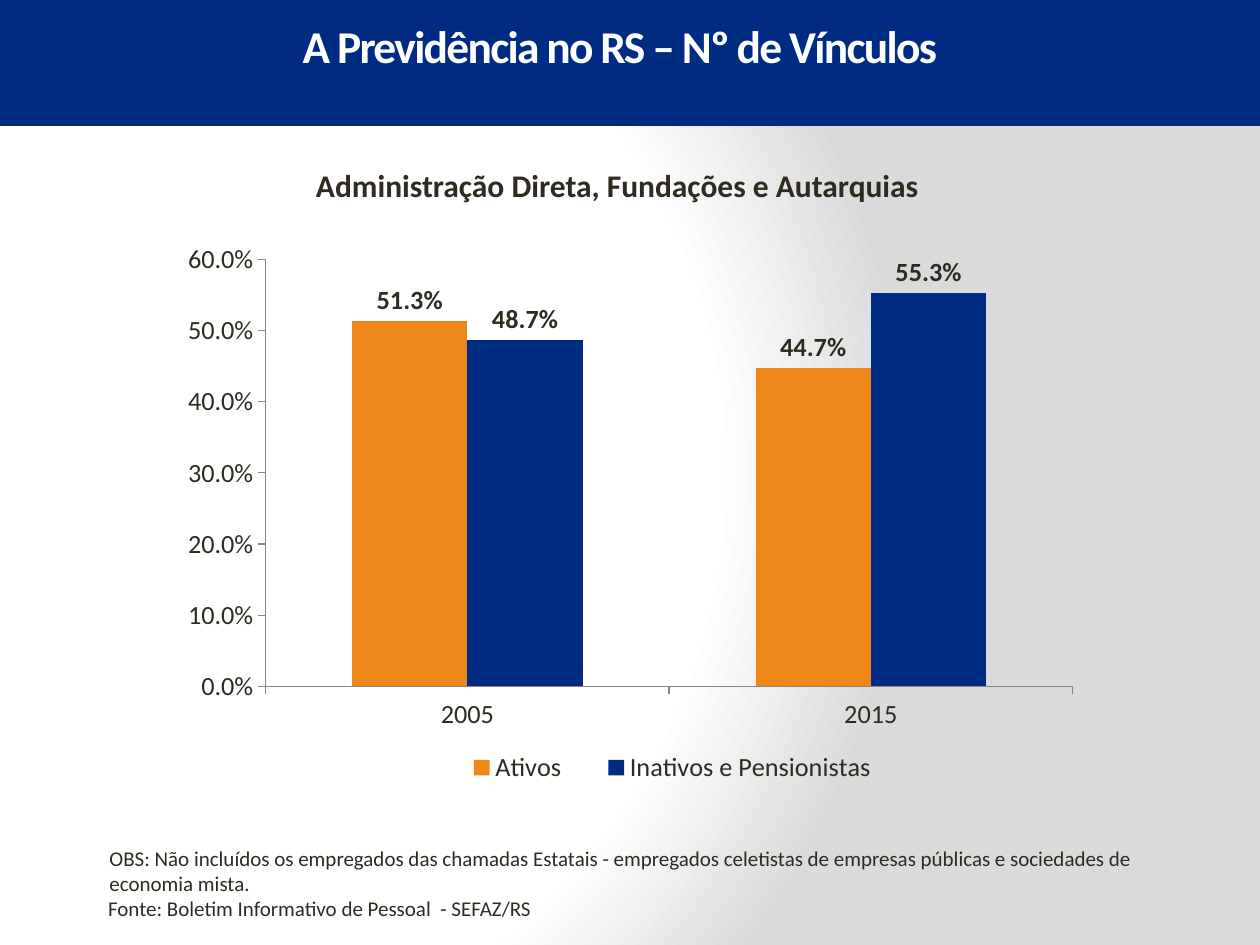
from dataclasses import dataclass

from pptx import Presentation
from pptx.chart.data import CategoryChartData
from pptx.dml.color import RGBColor
from pptx.enum.chart import XL_CHART_TYPE, XL_LABEL_POSITION, XL_LEGEND_POSITION, XL_TICK_MARK
from pptx.enum.text import MSO_ANCHOR, MSO_AUTO_SIZE, PP_ALIGN
from pptx.oxml import parse_xml
from pptx.oxml.ns import nsdecls, qn
from pptx.util import Inches, Pt

COLUMNS = XL_CHART_TYPE.COLUMN_CLUSTERED
LABEL_OUTSIDE = XL_LABEL_POSITION.OUTSIDE_END
LEGEND_BOTTOM = XL_LEGEND_POSITION.BOTTOM
TICK_OUTSIDE = XL_TICK_MARK.OUTSIDE
TOP = MSO_ANCHOR.TOP
NO_FIT = MSO_AUTO_SIZE.NONE
LEFT, CENTER = PP_ALIGN.LEFT, PP_ALIGN.CENTER
TITLE_ONLY = 5


@dataclass(frozen=True)
class Theme:
    font: str = "Calibri"
    navy: str = "002B82"
    orange: str = "ED8717"
    ink: str = "2F2B20"
    white: str = "FFFFFF"
    gray: str = "DADADA"
    axis: str = "868686"
    title: int = 26
    subtitle: int = 18
    chart: int = 15
    note: int = 12


THEME = Theme()


def rgb(value):
    return RGBColor.from_string(value)


def format_font(font, size, color=THEME.ink, bold=False):
    font.name = THEME.font
    font.size = Pt(size)
    font.bold = bold
    font.color.rgb = rgb(color)


def write_text(box, text, size, color=THEME.ink, bold=False, align=LEFT, spacing=None):
    frame = box.text_frame
    frame.word_wrap = True
    frame.auto_size = NO_FIT
    frame.vertical_anchor = TOP
    para = frame.paragraphs[0]
    para.alignment = align
    para.line_spacing = 1.0
    para.space_before = Pt(0)
    span = para.add_run()
    span.text = text
    format_font(span.font, size, color, bold)
    if spacing is not None:
        span.font._element.set("spc", str(spacing * 100))


def add_text(page, text, left, top, width, height, **style):
    box = page.shapes.add_textbox(Inches(left), Inches(top), Inches(width), Inches(height))
    write_text(box, text, **style)


def set_background(page):
    """Radial gradient from white on the left to gray on the right."""
    page.background.fill.solid()
    properties = page._element.find(".//" + qn("p:bgPr"))
    stops = "".join(
        f'<a:gs pos="{position * 1000}"><a:srgbClr val="{color}"/></a:gs>'
        for position, color in ((0, THEME.white), (75, THEME.white), (100, THEME.gray)))
    gradient = parse_xml(
        f'<a:gradFill {nsdecls("a")} rotWithShape="1"><a:gsLst>{stops}</a:gsLst>'
        '<a:path path="circle"><a:fillToRect l="20000" t="50000" r="100000" b="50000"/>'
        '</a:path></a:gradFill>')
    properties.replace(properties[0], gradient)


def curve_points(start, control_1, control_2, end, steps=60):
    """Points along a cubic curve, without its start."""
    points = []
    for step in range(1, steps + 1):
        t = step / steps
        weights = ((1 - t) ** 3, 3 * t * (1 - t) ** 2, 3 * t * t * (1 - t), t ** 3)
        points.append(tuple(
            sum(weight * value for weight, value in zip(weights, values))
            for values in zip(start, control_1, control_2, end)))
    return points


def add_header_wave(page):
    right_end = (10.02, 0.94)
    wave = curve_points(right_end, (6.67, 1.05), (3.43, 0.24), (-0.03, 1.09))
    builder = page.shapes.build_freeform(-0.04, -0.02, scale=Inches(1))
    builder.add_line_segments([(10.02, -0.03), right_end] + wave, close=True)
    header = builder.convert_to_shape()
    header.shadow.inherit = False
    header.fill.solid()
    header.fill.fore_color.rgb = rgb(THEME.navy)
    header.line.fill.background()
    # The band lies behind the title
    page.shapes._spTree.insert(2, header._element)


def set_title(page, text):
    title = page.shapes.title
    title.left, title.top = Inches(-0.08), Inches(0.09)
    title.width, title.height = Inches(10), Inches(0.98)
    write_text(title, text, size=THEME.title, color=THEME.white, bold=True,
               align=CENTER, spacing=-1)


def set_layout(element, left, top, width, height, inner=False):
    """Fix the place of a chart part, in fractions of the chart."""
    target = '<c:layoutTarget val="inner"/>' if inner else ""
    sizes = "".join(f'<c:{name} val="{value}"/>' for name, value in
                    (("x", left), ("y", top), ("w", width), ("h", height)))
    layout = parse_xml(
        f'<c:layout {nsdecls("c")}><c:manualLayout>{target}<c:xMode val="edge"/>'
        f'<c:yMode val="edge"/>{sizes}</c:manualLayout></c:layout>')
    for old in element.findall(qn("c:layout")):
        element.remove(old)
    position = 0 if inner else 1
    element.insert(position, layout)


def format_axis(axis):
    axis.has_major_gridlines = False
    axis.major_tick_mark = TICK_OUTSIDE
    axis.format.line.color.rgb = rgb(THEME.axis)
    axis.format.line.width = Pt(0.75)
    format_font(axis.tick_labels.font, THEME.chart)


def add_column_chart(page, categories, series):
    data = CategoryChartData(number_format="0.0%")
    data.categories = categories
    for name, values, _ in series:
        data.add_series(name, values)
    chart = page.shapes.add_chart(
        COLUMNS, Inches(1.32), Inches(1.86), Inches(7.37), Inches(4.41), data).chart
    chart.has_title = False
    format_font(chart.font, THEME.chart)

    # Axes
    format_axis(chart.category_axis)
    scale = chart.value_axis
    format_axis(scale)
    scale.minimum_scale, scale.maximum_scale, scale.major_unit = 0, 0.6, 0.1
    scale.tick_labels.number_format = "0.0%"
    scale.tick_labels.number_format_is_linked = False

    # Columns and their labels
    plot = chart.plots[0]
    plot.gap_width, plot.overlap = 150, 0
    plot.vary_by_categories = False
    for columns, (_, _, color) in zip(plot.series, series):
        columns.format.fill.solid()
        columns.format.fill.fore_color.rgb = rgb(color)
        labels = columns.data_labels
        labels.show_value = True
        labels.number_format = "0.0%"
        labels.number_format_is_linked = False
        labels.position = LABEL_OUTSIDE
        format_font(labels.font, THEME.chart, bold=True)

    # Legend and plot area
    chart.has_legend = True
    chart.legend.position = LEGEND_BOTTOM
    chart.legend.include_in_layout = False
    format_font(chart.legend.font, THEME.chart)
    set_layout(chart.legend._element, 0.29, 0.92, 0.51, 0.08)
    plot_area = chart._chartSpace.find(".//" + qn("c:plotArea"))
    set_layout(plot_area, 0.107, 0.045, 0.869, 0.769, inner=True)


def main():
    deck = Presentation()
    deck.slide_width, deck.slide_height = Inches(10), Inches(7.5)
    page = deck.slides.add_slide(deck.slide_layouts[TITLE_ONLY])

    # Background, header and title
    set_background(page)
    add_header_wave(page)
    set_title(page, "A Previdência no RS – Nº de Vínculos")

    # Chart with its heading
    add_column_chart(page, ("2005", "2015"), (
        ("Ativos", (0.513, 0.447), THEME.orange),
        ("Inativos e Pensionistas", (0.487, 0.553), THEME.navy)))
    add_text(page, "Administração Direta, Fundações e Autarquias",
             2.41, 1.27, 5.26, 0.4, size=THEME.subtitle, bold=True)

    # Notes
    add_text(page, "OBS: Não incluídos os empregados das chamadas Estatais - empregados "
             "celetistas de empresas públicas e sociedades de economia mista.",
             0.77, 6.66, 8.53, 0.5, size=THEME.note)
    add_text(page, "Fonte: Boletim Informativo de Pessoal  - SEFAZ/RS",
             0.76, 7.06, 8.53, 0.3, size=THEME.note)

    deck.save("out.pptx")


if __name__ == "__main__":
    main()
